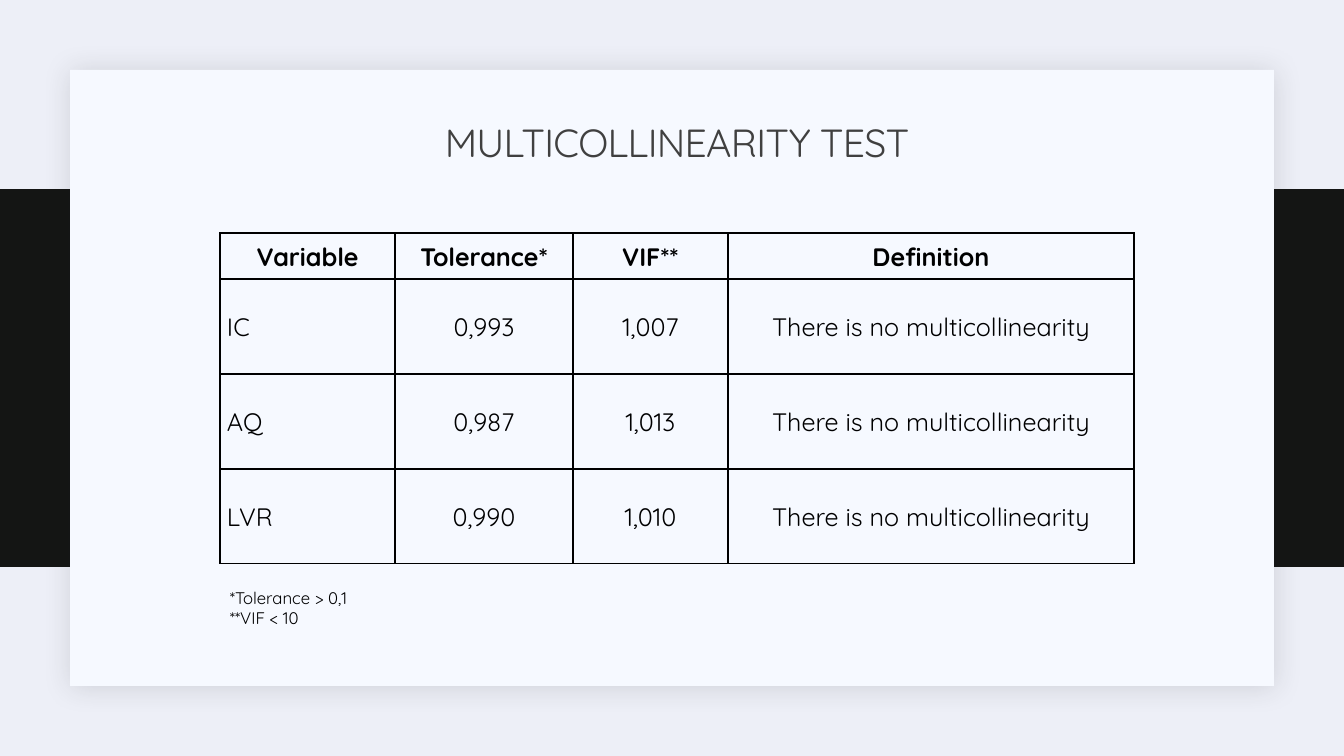
from dataclasses import dataclass

from lxml import etree
from pptx import Presentation, util as u
from pptx.dml.color import RGBColor
from pptx.enum import shapes, text
from pptx.oxml import ns, parse_xml

EMU_PER_PX = 914400 / 100.8


def px(length):
    return u.Emu(round(length * EMU_PER_PX))


@dataclass(frozen=True)
class Theme:
    font: str = "Quicksand"
    background: str = "EDEFF7"
    band: str = "141514"
    card: str = "F6F9FF"
    shadow: str = "1F2125"
    heading: str = "404040"
    ink: str = "000000"
    heading_size: int = 28
    table_size: int = 18
    note_size: int = 12


class SlideBuilder:
    def __init__(self, slide, theme):
        self.slide = slide
        self.theme = theme
        fill = slide.background.fill
        fill.solid()
        fill.fore_color.rgb = RGBColor.from_string(theme.background)

    def rectangle(self, left, top, width, height, color):
        panel = self.slide.shapes.add_shape(
            shapes.MSO_SHAPE.RECTANGLE, px(left), px(top), px(width), px(height))
        panel.shadow.inherit = False
        panel.fill.solid()
        panel.fill.fore_color.rgb = RGBColor.from_string(color)
        panel.line.fill.background()
        return panel

    def soft_shadow(self, panel):
        effects = panel._element.spPr.find(ns.qn("a:effectLst"))
        effects.append(parse_xml(
            f'<a:outerShdw {ns.nsdecls("a")} blurRad="{u.Pt(20)}" dist="{u.Pt(2)}" '
            f'dir="2700000" algn="ctr" rotWithShape="0">'
            f'<a:srgbClr val="{self.theme.shadow}"><a:alpha val="15000"/></a:srgbClr>'
            f'</a:outerShdw>'))

    def style(self, paragraph, size, color, bold=False, align=None, line_spacing=None):
        paragraph.alignment = align
        paragraph.line_spacing = line_spacing
        for run in paragraph.runs:
            run.font.name = self.theme.font
            run.font.size = u.Pt(size)
            run.font.bold = bold
            run.font.color.rgb = RGBColor.from_string(color)

    def text_box(self, left, top, width, height, wording, size, color,
                 anchor=text.MSO_ANCHOR.TOP, **paragraph_style):
        frame = self.slide.shapes.add_textbox(
            px(left), px(top), px(width), px(height)).text_frame
        frame.word_wrap = True
        frame.vertical_anchor = anchor
        frame.text = wording
        for paragraph in frame.paragraphs:
            self.style(paragraph, size, color, **paragraph_style)
        return frame

    def borders(self, cell):
        properties = cell._tc.get_or_add_tcPr()
        for position, side in enumerate(("lnL", "lnR", "lnT", "lnB")):
            line = etree.Element(ns.qn(f"a:{side}"), w=str(u.Pt(1)))
            fill = etree.SubElement(line, ns.qn("a:solidFill"))
            etree.SubElement(fill, ns.qn("a:srgbClr"), val=self.theme.ink)
            properties.insert(position, line)

    def table(self, left, top, column_widths, row_heights, rows):
        """Draw a ruled table with a bold header and a justified first column."""
        grid = self.slide.shapes.add_table(
            len(rows), len(column_widths), px(left), px(top),
            px(sum(column_widths)), px(sum(row_heights))).table
        grid.first_row = grid.horz_banding = False
        for column, width in zip(grid.columns, column_widths):
            column.width = px(width)
        for r, (height, values) in enumerate(zip(row_heights, rows)):
            grid.rows[r].height = px(height)
            for c, value in enumerate(values):
                cell = grid.cell(r, c)
                cell.fill.background()
                self.borders(cell)
                cell.margin_left = cell.margin_right = px(7)
                cell.margin_top = cell.margin_bottom = 0
                cell.vertical_anchor = text.MSO_ANCHOR.MIDDLE
                cell.text_frame.text = value
                is_label = r > 0 and c == 0
                align = text.PP_ALIGN.JUSTIFY if is_label else text.PP_ALIGN.CENTER
                self.style(cell.text_frame.paragraphs[0], self.theme.table_size,
                           self.theme.ink, bold=r == 0, align=align, line_spacing=1.07)


def main():
    theme = Theme()
    deck = Presentation()
    deck.slide_width, deck.slide_height = px(1344), px(756)
    page = SlideBuilder(deck.slides.add_slide(deck.slide_layouts[6]), theme)

    page.rectangle(0, 189, 1344, 378, theme.band)
    card = page.rectangle(70, 70, 1204, 616, theme.card)
    page.soft_shadow(card)

    heading = page.text_box(
        225, 113, 904, 64, "MULTICOLLINEARITY TEST", theme.heading_size, theme.heading,
        anchor=text.MSO_ANCHOR.MIDDLE, align=text.PP_ALIGN.CENTER, line_spacing=0.9)
    heading.paragraphs[0].runs[0].font._element.set("spc", "-50")

    verdict = "There is no multicollinearity"
    results = [
        ("Variable", "Tolerance*", "VIF**", "Definition"),
        ("IC", "0,993", "1,007", verdict),
        ("AQ", "0,987", "1,013", verdict),
        ("LVR", "0,990", "1,010", verdict),
    ]
    page.table(220, 233, (175, 178, 155, 406), (46, 95, 95, 95), results)

    thresholds = page.text_box(220, 583, 230, 50, "*Tolerance > 0,1\n**VIF < 10",
                               theme.note_size, theme.ink)
    thresholds.auto_size = text.MSO_AUTO_SIZE.SHAPE_TO_FIT_TEXT

    deck.save("out.pptx")


if __name__ == "__main__":
    main()
